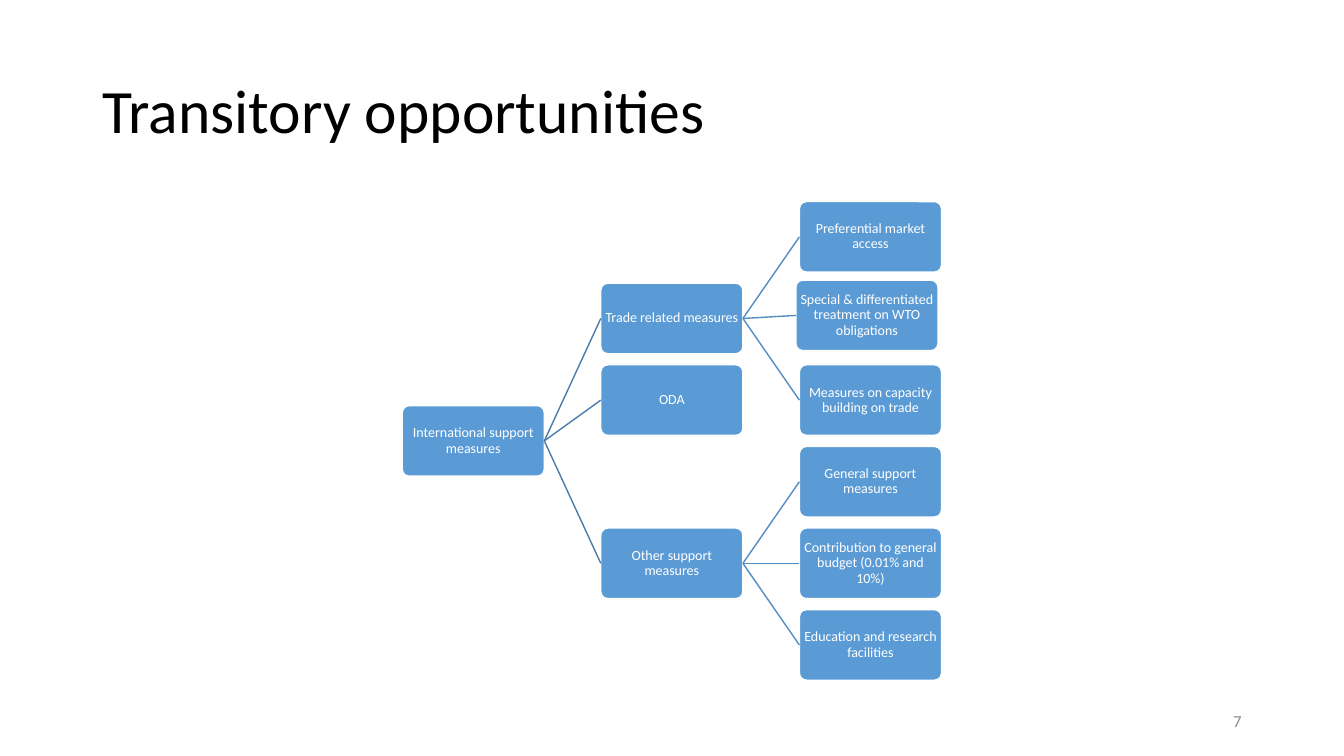
import pptx
import pptx.util
import pptx.dml.color
import pptx.enum.shapes
import pptx.enum.text
import pptx.oxml

Pt = pptx.util.Pt
ALIGN = pptx.enum.text.PP_ALIGN
HUES = {"ink": "000000", "box": "5B9BD5", "white": "FFFFFF",
        "near": "497CAB", "far": "538DC1", "grey": "8C8C8C"}

# Grid of the tree
LEFT, TOP = 287.3, 144
COL, ROW = 141.85, 58.3
WIDE, HIGH = 101.5, 50.4

# Label, row, children, and an optional nudge off the grid
TREE = ("International support measures", 2.5, [
    ("Trade related measures", 1, [
        ("Preferential market access", 0, []),
        ("Special & differentiated treatment on WTO obligations", 1, [], (-2.5, -2.2)),
        ("Measures on capacity building on trade", 2, []),
    ]),
    ("ODA", 2, []),
    ("Other support measures", 4, [
        ("General support measures", 3, []),
        ("Contribution to general budget (0.01% and 10%)", 4, []),
        ("Education and research facilities", 5, []),
    ]),
])


class Deck:
    font = "Calibri"

    def __init__(self, slide):
        self.slide = slide
        self.shapes = slide.shapes

    def hue(self, name):
        return pptx.dml.color.RGBColor.from_string(HUES[name])

    def words(self, shape, text, size, hue, align, space=1.0):
        frame = shape.text_frame
        frame.word_wrap = True
        frame.auto_size = pptx.enum.text.MSO_AUTO_SIZE.NONE
        frame.vertical_anchor = pptx.enum.text.MSO_ANCHOR.MIDDLE
        para = frame.paragraphs[0]
        para.alignment = align
        para.line_spacing = space
        run = para.add_run()
        run.text = text
        run.font.name = self.font
        run.font.size = Pt(size)
        run.font.color.rgb = self.hue(hue)

    def title(self, text, left, top, width, height):
        shape = self.shapes.title
        shape.left, shape.top = Pt(left), Pt(top)
        shape.width, shape.height = Pt(width), Pt(height)
        self.words(shape, text, 44, "ink", ALIGN.LEFT, 0.9)

    def label(self, text, left, top, width, height):
        shape = self.shapes.add_textbox(Pt(left), Pt(top), Pt(width), Pt(height))
        self.words(shape, text, 12, "grey", ALIGN.RIGHT)

    def box(self, text, left, top):
        shape = self.shapes.add_shape(
            pptx.enum.shapes.MSO_SHAPE.ROUNDED_RECTANGLE,
            Pt(left), Pt(top), Pt(WIDE), Pt(HIGH))
        shape.adjustments[0] = 0.1
        shape.shadow.inherit = False
        shape.fill.solid()
        shape.fill.fore_color.rgb = self.hue("box")
        shape.line.color.rgb = self.hue("white")
        shape.line.width = Pt(1)
        frame = shape.text_frame
        frame.margin_left = frame.margin_right = Pt(0.7)
        frame.margin_top = frame.margin_bottom = Pt(0.7)
        self.words(shape, text, 10, "white", ALIGN.CENTER, 0.9)
        return shape

    def link(self, start, end, hue):
        line = self.shapes.add_connector(
            pptx.enum.shapes.MSO_CONNECTOR.STRAIGHT, 0, 0, 0, 0)
        # Right side of the parent to left side of the child
        line.begin_connect(start, 3)
        line.end_connect(end, 1)
        line.line.color.rgb = self.hue(hue)
        line.line.width = Pt(1)
        props = line._element.spPr
        props.append(pptx.oxml.parse_xml(
            '<a:effectLst xmlns:a="http://schemas.openxmlformats.org/drawingml/2006/main"/>'))

    def branch(self, node, depth=0):
        text, row, kids, *nudge = node
        right, down = nudge[0] if nudge else (0, 0)
        shape = self.box(text, LEFT + depth * COL + right, TOP + row * ROW + down)
        for kid in kids:
            self.link(shape, self.branch(kid, depth + 1), "far" if depth else "near")
        return shape


def main():
    show = pptx.Presentation()
    show.slide_width, show.slide_height = Pt(960), Pt(540)
    deck = Deck(show.slides.add_slide(show.slide_layouts[5]))

    # Title
    deck.title("Transitory opportunities", 66, 28.75, 828, 104.4)
    # Tree of measures
    deck.branch(TREE)
    # Page number
    deck.label("7", 678, 500.5, 216, 28.75)

    show.save("out.pptx")


if __name__ == "__main__":
    main()
